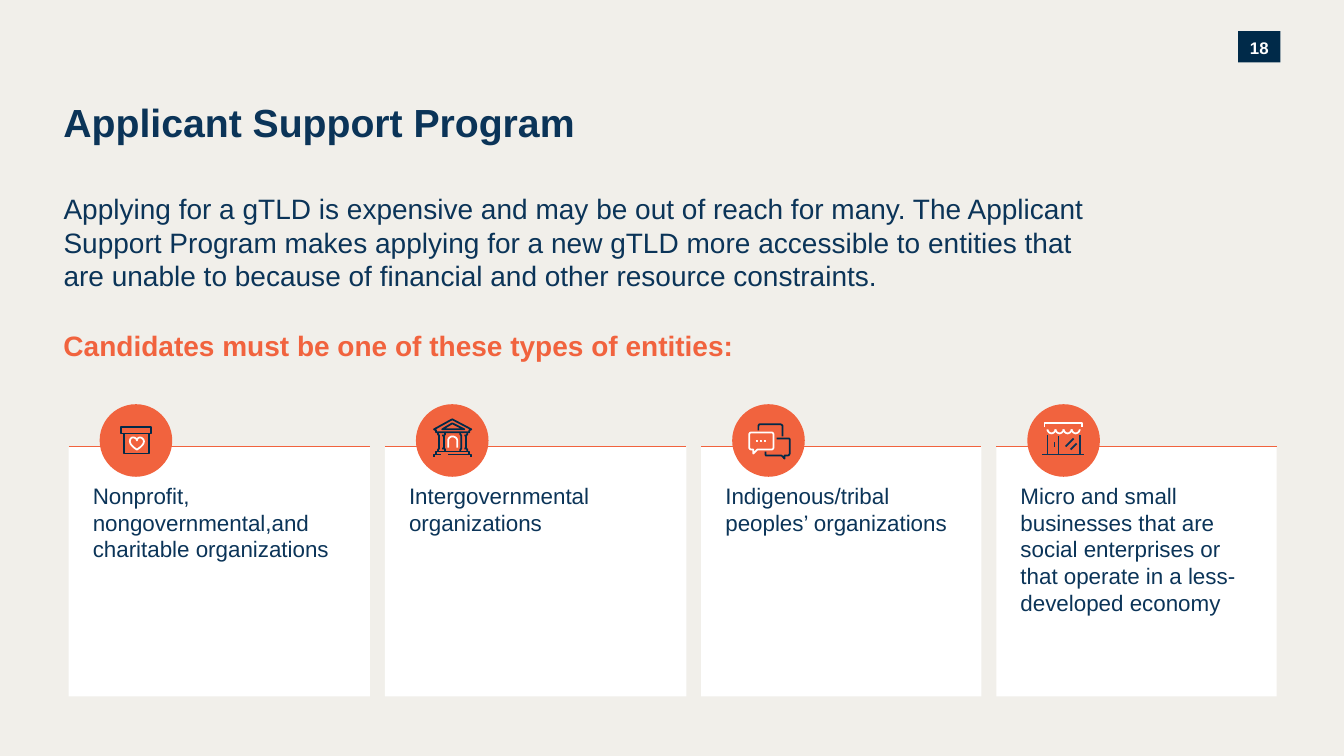
import pptx
import pptx.dml.color
import pptx.enum.shapes
import pptx.enum.text
import pptx.oxml
import pptx.util

SHAPE = pptx.enum.shapes.MSO_SHAPE
STRAIGHT = pptx.enum.shapes.MSO_CONNECTOR.STRAIGHT
ANCHOR = pptx.enum.text.MSO_ANCHOR
ALIGN = pptx.enum.text.PP_ALIGN

PAPER = pptx.dml.color.RGBColor(0xF1, 0xEF, 0xEA)
WHITE = pptx.dml.color.RGBColor(0xFF, 0xFF, 0xFF)
NAVY = pptx.dml.color.RGBColor(0x0B, 0x34, 0x58)
INK = pptx.dml.color.RGBColor(0x00, 0x2A, 0x49)
ORANGE = pptx.dml.color.RGBColor(0xF1, 0x63, 0x3E)

# Grid: square cells, 75 rows to the slide's height
COLUMNS, ROWS = 133.3, 75
CELL = pptx.util.Inches(0.1)
MARGIN = 6.3
CARD_LEFT, CARD_TOP, CARD_HEIGHT, CARD_GAP = 6.8, 44.3, 24.8, 1.47
BADGE_INSET, BADGE_TOP, BADGE_SIZE = 3.08, 40.1, 7.2
CURVE_STEPS = 6


def cells(count):
    return pptx.util.Emu(round(count * CELL))


# Text and blocks
def write(box, paragraphs, size, colour, bold=False, insets=(0, 0, 0, 0),
          anchor=ANCHOR.TOP, align=ALIGN.LEFT, spacing=None):
    frame = box.text_frame
    frame.word_wrap = True
    frame.vertical_anchor = anchor
    (frame.margin_left, frame.margin_top,
     frame.margin_right, frame.margin_bottom) = map(cells, insets)
    for index, text in enumerate(paragraphs):
        para = frame.add_paragraph() if index else frame.paragraphs[0]
        para.alignment = align
        para.line_spacing = spacing
        span = para.add_run()
        span.text = text
        span.font.name = "Arial"
        span.font.size = pptx.util.Pt(size)
        span.font.bold = bold
        span.font.color.rgb = colour


def add_text(page, top, width, height, text, size, colour, bold=False):
    box = page.shapes.add_textbox(*map(cells, (MARGIN, top, width, height)))
    write(box, [text], size, colour, bold)


def add_block(shapes, kind, left, top, width, height, fill):
    block = shapes.add_shape(kind, *map(cells, (left, top, width, height)))
    block.shadow.inherit = False
    block.fill.solid()
    block.fill.fore_color.rgb = fill
    block.line.fill.background()
    return block


def add_line(shapes, start, end, colour):
    line = shapes.add_connector(STRAIGHT, *map(cells, (*start, *end)))
    line.line.color.rgb = colour
    line.line.width = pptx.util.Pt(1.25)
    effects = pptx.oxml.parse_xml(
        '<a:effectLst xmlns:a="http://schemas.openxmlformats.org/drawingml/2006/main"/>')
    line._element.spPr.append(effects)


# Icon strokes: pairs are corners, sextuples are Bézier curves
def flatten(steps):
    points = []
    for step in steps:
        if len(step) == 2:
            points.append(step)
            continue
        knots = [points[-1], step[:2], step[2:4], step[4:]]
        for index in range(1, CURVE_STEPS + 1):
            t = index / CURVE_STEPS
            weights = ((1 - t) ** 3, 3 * t * (1 - t) ** 2, 3 * t * t * (1 - t), t ** 3)
            points.append(tuple(sum(weight * knot[axis] for weight, knot in zip(weights, knots))
                                for axis in (0, 1)))
    return points


def add_stroke(shapes, left, colour, steps, closed=False):
    points = [(left + x / 10, BADGE_TOP + y / 10) for x, y in flatten(steps)]
    if len(points) == 2:
        add_line(shapes, *points, colour)
        return
    corners = [(cells(x), cells(y)) for x, y in points]
    builder = shapes.build_freeform(*corners[0])
    builder.add_line_segments(corners[1:], close=closed)
    stroke = builder.convert_to_shape()
    stroke.shadow.inherit = False
    stroke.fill.background()
    stroke.line.color.rgb = colour
    stroke.line.width = pptx.util.Pt(1.25)


# Icons, in hundredths of an inch from the badge's corner
def donation_icon():
    heart = [(37, 45), (37, 45, 44, 41, 44, 37), (44, 35, 42, 33, 40, 33),
             (38, 33, 37, 35, 37, 36), (37, 35, 36, 33, 33, 33),
             (31, 33, 30, 35, 30, 37), (30, 41, 37, 45, 37, 45)]
    return [(INK, [(21, 23), (51, 23), (51, 29), (21, 29)], True),
            (INK, [(24, 29), (49, 29), (49, 49), (24, 49)], True),
            (WHITE, heart, True)]


def institution_icon():
    strokes = [
        (INK, [(32, 50), (55, 50), (55, 52)]),
        (INK, [(18, 52), (18, 50), (25, 50)]),
        (INK, [(20, 50), (20, 47), (53, 47), (53, 50)]),
        (WHITE, [(32, 43), (32, 36), (32, 34, 34, 32, 36, 32),
                 (39, 32, 41, 34, 41, 36), (41, 43)]),
        (INK, [(36, 19), (26, 25), (48, 25)], True),
        (INK, [(53, 28), (20, 28), (20, 26), (18, 25), (36, 15), (55, 25), (53, 26)], True)]
    for x in (22, 44):
        strokes += [
            (INK, [(x + 6, 31), (x + 6, 44)]),
            (INK, [(x + 4, 31), (x + 6, 31), (x + 7, 30), (x + 7, 28)]),
            (INK, [(x + 4, 44), (x + 6, 44), (x + 7, 45), (x + 7, 47)]),
            (INK, [(x, 47), (x, 45), (x + 1, 44), (x + 1, 31), (x, 30), (x, 28)])]
    return strokes


def dialogue_icon():
    strokes = [
        (WHITE, [(39, 28), (19, 28), (18, 28, 17, 29, 17, 30), (17, 43),
                 (17, 44, 18, 45, 19, 45), (21, 45), (21, 49), (25, 45), (39, 45),
                 (40, 45, 41, 44, 41, 43), (41, 30), (41, 29, 40, 28, 39, 28)], True),
        (INK, [(33, 47), (33, 49), (33, 50, 33, 51, 34, 51), (49, 51), (52, 54), (52, 51),
               (55, 51), (56, 51, 57, 50, 57, 49), (57, 35), (57, 34, 56, 34, 55, 34), (44, 34)]),
        (INK, [(26, 26), (26, 22), (26, 21, 27, 20, 27, 20), (48, 20),
               (49, 20, 50, 21, 50, 22), (50, 32)])]
    return strokes + [(WHITE, [(x, 36), (x + 1, 36), (x + 1, 37), (x, 37)], True)
                      for x in (24, 28, 32)]


def shop_icon():
    lines = [(20, 31, 20, 50), (31, 32, 31, 50), (52, 31, 52, 50), (27, 38, 27, 42),
             (15, 50, 56, 50), (46, 34, 38, 42), (49, 39, 43, 45)]
    scallops = [(WHITE, [(x + 8, 25), (x + 8, 27, x + 6, 29, x + 4, 29),
                         (x + 2, 29, x, 27, x, 25)]) for x in range(20, 52, 8)]
    awning = (WHITE, [(17, 23), (17, 19), (54, 19), (54, 23)])
    return [(NAVY, [line[:2], line[2:]]) for line in lines] + scallops + [awning]


CARDS = [
    (29.9, donation_icon, ["Nonprofit,", "nongovernmental,and charitable organizations"]),
    (29.9, institution_icon, ["Intergovernmental organizations"]),
    (27.8, dialogue_icon, ["Indigenous/tribal peoples’ organizations"]),
    (27.8, shop_icon, ["Micro and small businesses that are social enterprises or "
                       "that operate in a less-developed economy"]),
]


def add_card(page, left, width, icon, paragraphs):
    card = add_block(page.shapes, SHAPE.RECTANGLE, left, CARD_TOP, width, CARD_HEIGHT, WHITE)
    write(card, paragraphs, 16, NAVY, insets=(2.4, 3.5, 1.6, 2))
    add_line(page.shapes, (left, CARD_TOP), (left + width, CARD_TOP), ORANGE)
    badge = page.shapes.add_group_shape().shapes
    badge_left = left + BADGE_INSET
    add_block(badge, SHAPE.OVAL, badge_left, BADGE_TOP, BADGE_SIZE, BADGE_SIZE, ORANGE)
    for stroke in icon():
        add_stroke(badge, badge_left, *stroke)


def main():
    deck = pptx.Presentation()
    deck.slide_width, deck.slide_height = cells(COLUMNS), cells(ROWS)
    page = deck.slides.add_slide(deck.slide_layouts[6])
    page.background.fill.solid()
    page.background.fill.fore_color.rgb = PAPER

    # Page number
    number = add_block(page.shapes, SHAPE.RECTANGLE, 122.8, 3.1, 4.2, 3.1, INK)
    write(number, ["18"], 12, WHITE, True, anchor=ANCHOR.MIDDLE,
          align=ALIGN.CENTER, spacing=1.08)

    # Heading and introduction
    add_text(page, 9.8, 73.4, 5.5, "Applicant Support Program", 28, NAVY, True)
    add_text(page, 19, 102.8, 14.9,
             "Applying for a gTLD is expensive and may be out of reach for many. "
             "The Applicant Support Program makes applying for a new gTLD more accessible "
             "to entities that are unable to because of financial and other resource "
             "constraints.", 20, NAVY)
    add_text(page, 32.6, 103.7, 4.3,
             "Candidates must be one of these types of entities:", 20, ORANGE, True)

    # Entity cards
    left = CARD_LEFT
    for width, icon, paragraphs in CARDS:
        add_card(page, left, width, icon, paragraphs)
        left += width + CARD_GAP

    deck.save("out.pptx")


if __name__ == "__main__":
    main()
